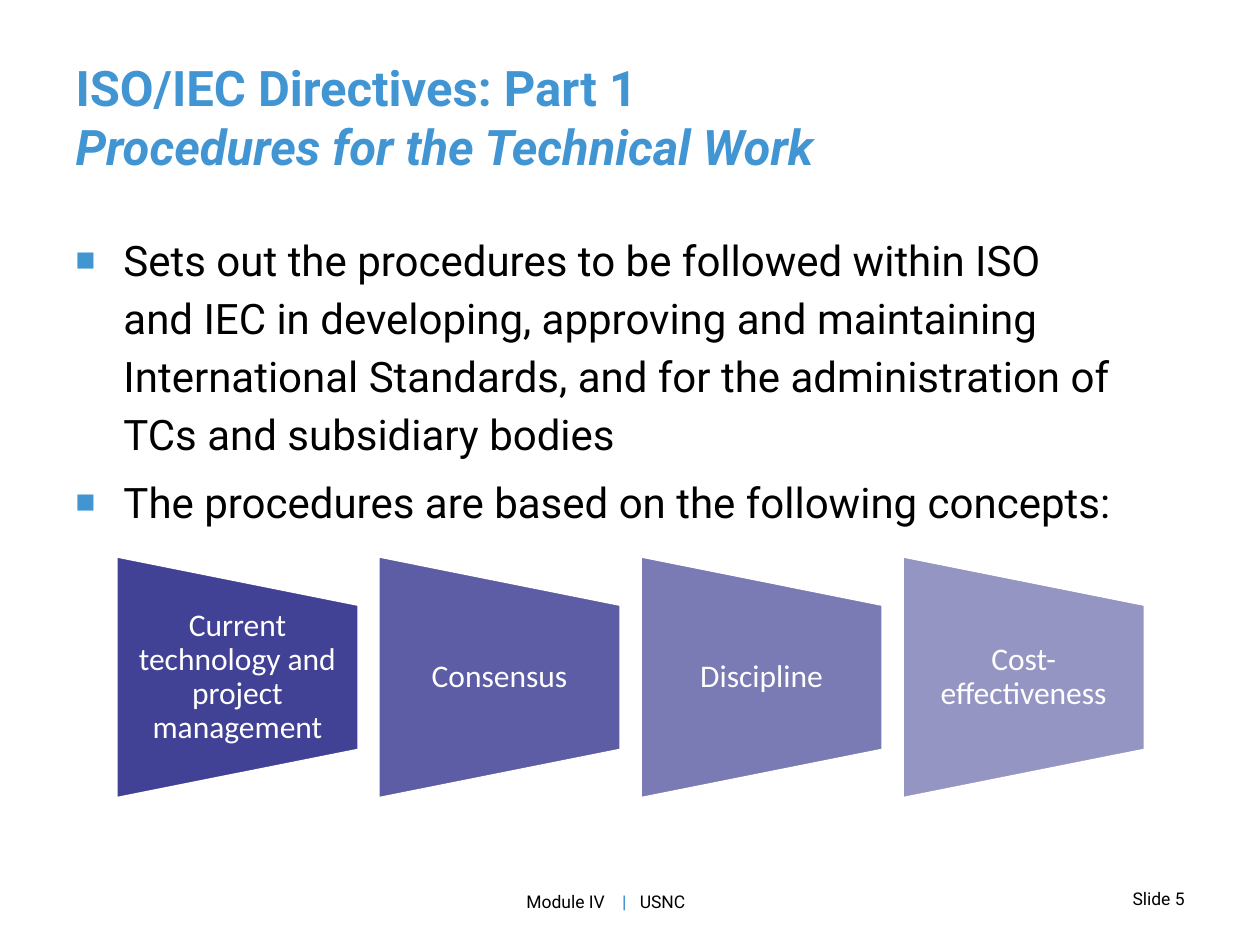
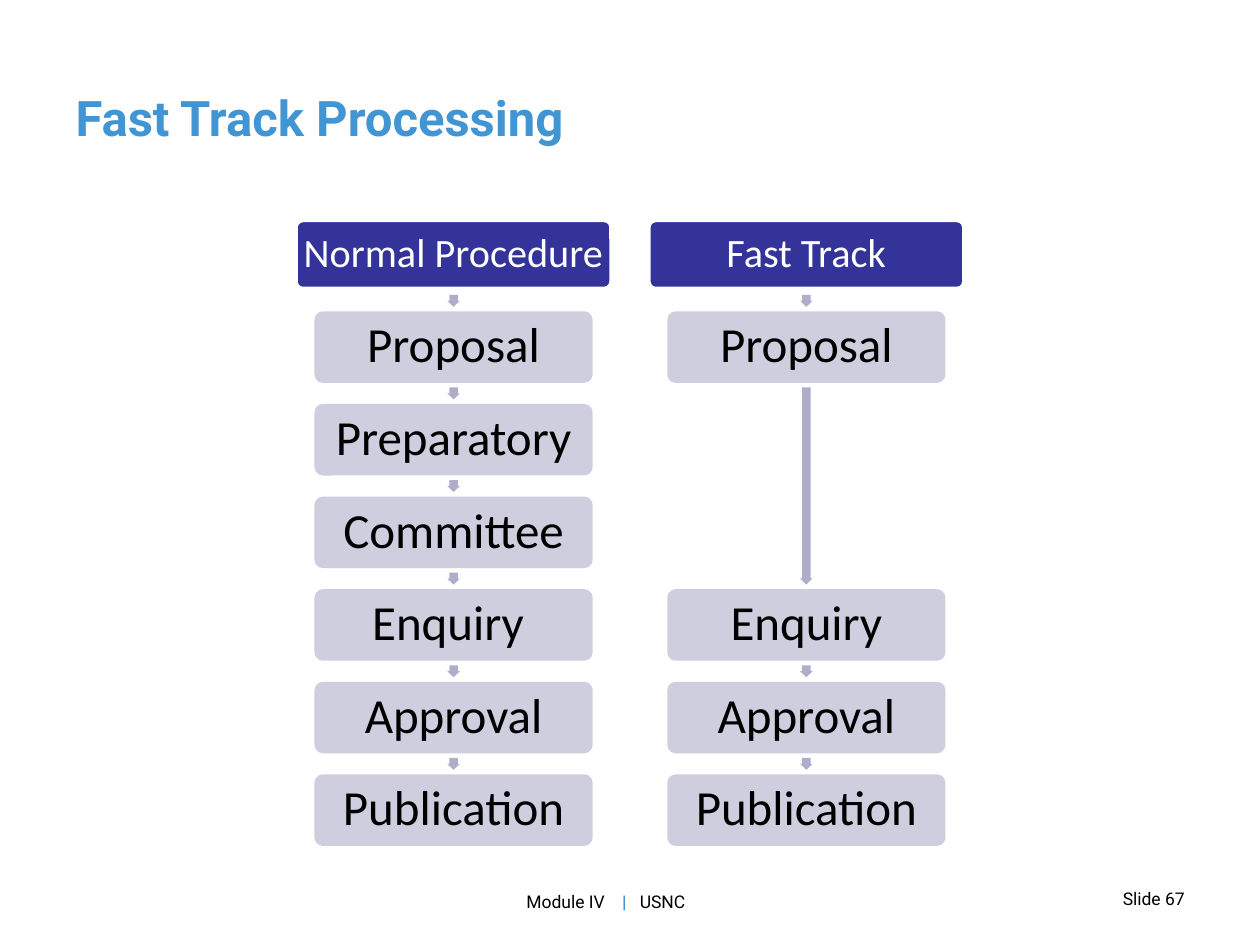
from lxml.etree import SubElement
from pptx import Presentation
from pptx.dml.color import RGBColor
from pptx.enum.shapes import MSO_SHAPE as Shape
from pptx.enum.text import MSO_ANCHOR as Anchor, MSO_AUTO_SIZE as AutoSize, PP_ALIGN as Align
from pptx.oxml.ns import qn
from pptx.util import Inches, Pt

DIRECTIVES_TITLE = [("ISO/IEC Directives: Part 1", False),
                    ("Procedures for the Technical Work", True)]
DIRECTIVES_POINTS = [
    "Sets out the procedures to be followed within ISO \vand IEC in developing, approving "
    "and maintaining International Standards, and for the administration of TCs and "
    "subsidiary bodies",
    "The procedures are based on the following concepts:",
]
CONCEPTS = [("Current technology and project management", 90), ("Consensus", 77),
            ("Discipline", 63), ("Cost-effectiveness", 50)]
TRACK_TITLE = [("Fast Track Processing", False)]
TRACKS = [
    [(0, "Normal Procedure"), (1, "Proposal"), (2, "Preparatory"), (3, "Committee"),
     (4, "Enquiry "), (5, "Approval"), (6, "Publication")],
    [(0, "Fast Track"), (1, "Proposal"), (4, "Enquiry"), (5, "Approval"), (6, "Publication")],
]
FOOTER_PARTS = ["Module IV", "\t|", "\tUSNC"]
FOOTER_TABS = [0.76, 0.9]

BLUE = RGBColor(0x41, 0x95, 0xD3)
BLACK = RGBColor(0, 0, 0)
WHITE = RGBColor(255, 255, 255)
NAVY = RGBColor(0x2D, 0x2D, 0x8A)
INDIGO = RGBColor(0x33, 0x33, 0x99)
LAVENDER = RGBColor(0xCE, 0xCE, 0xDE)
ARROW_GRAY = RGBColor(0xAE, 0xAE, 0xCA)
TEXT_FONT, DIAGRAM_FONT = "Roboto", "Calibri"
TITLE_SIZE, BODY_SIZE = 28, 24

CONCEPT_LEFT, CONCEPT_TOP, CONCEPT_SIZE, CONCEPT_PITCH = 0.92, 4.41, 1.93, 2.08
LABEL_TOP, LABEL_HEIGHT = 4.8, 1.15
TRACK_CENTERS = [3.6, 6.4]
TRACK_TOP, ROW_HEIGHT = 1.75, 0.54
ROW_PITCH = (6.16 - TRACK_TOP) / 6
HEADER_WIDTH, STEP_WIDTH, ARROW_WIDTH, ARROW_GAP = 2.5, 2.18, 0.1, 0.05


def box(left, top, width, height):
    return [Inches(length) for length in (left, top, width, height)]


def place(shape, *bounds):
    shape.left, shape.top, shape.width, shape.height = box(*bounds)


def style(paragraph, size, color, name=TEXT_FONT, bold=None):
    font = paragraph.font
    font.size, font.name, font.bold = Pt(size), name, bold
    font.color.rgb = color


def paint(shape, fill, line=None, opacity=100):
    shape.shadow.inherit = False
    shape.fill.solid()
    shape.fill.fore_color.rgb = fill
    if opacity < 100:
        color = shape.element.spPr.find(f"{qn('a:solidFill')}/{qn('a:srgbClr')}")
        SubElement(color, qn("a:alpha"), val=str(opacity * 1000))
    if line is None:
        shape.line.fill.background()
    else:
        shape.line.color.rgb = line
        shape.line.width = Pt(2)


def write_label(shape, text, size, color, side_inset=0.02, end_inset=0.05):
    frame = shape.text_frame
    frame.word_wrap = True
    frame.vertical_anchor = Anchor.MIDDLE
    frame.margin_left = frame.margin_right = Inches(side_inset)
    frame.margin_top = frame.margin_bottom = Inches(end_inset)
    paragraph = frame.paragraphs[0]
    paragraph.text = text
    paragraph.alignment = Align.CENTER
    paragraph.line_spacing = 0.9
    style(paragraph, size, color, DIAGRAM_FONT)


def set_template_sizes(presentation):
    master = presentation.slide_master.element
    for tag, size in (("p:titleStyle", TITLE_SIZE), ("p:bodyStyle", BODY_SIZE)):
        level = master.find(f".//{qn(tag)}/{qn('a:lvl1pPr')}/{qn('a:defRPr')}")
        level.set("sz", str(size * 100))


def add_slide(presentation, layout, title_lines, number):
    slide = presentation.slides.add_slide(presentation.slide_layouts[layout])
    title = slide.shapes.title
    place(title, 0.5, 0.3, 9, 1.25)
    title.text_frame.auto_size = AutoSize.NONE
    title.text_frame.vertical_anchor = Anchor.MIDDLE
    paragraph = title.text_frame.paragraphs[0]
    paragraph.alignment = Align.LEFT
    for index, (text, italic) in enumerate(title_lines):
        if index:
            paragraph.add_line_break()
        run = paragraph.add_run()
        run.text = text
        run.font.italic = italic
    style(paragraph, TITLE_SIZE, BLUE, bold=True)

    footer = slide.shapes.add_textbox(*box(4.08, 7.02, 2.42, 0.44)).text_frame
    footer.word_wrap = True
    paragraph = footer.paragraphs[0]
    tabs = SubElement(paragraph._p.get_or_add_pPr(), qn("a:tabLst"))
    for position in FOOTER_TABS:
        SubElement(tabs, qn("a:tab"), pos=str(Inches(position)), algn="l")
    for text in FOOTER_PARTS:
        run = paragraph.add_run()
        run.text = text
        if "|" in text:
            run.font.bold = True
            run.font.color.rgb = BLUE
    style(paragraph, 10, BLACK)

    counter = slide.shapes.add_textbox(*box(8.42, 7, 1.08, 0.33)).text_frame
    counter.word_wrap = True
    paragraph = counter.paragraphs[0]
    paragraph.text = f"Slide {number}"
    paragraph.alignment = Align.RIGHT
    style(paragraph, 10, BLACK)
    return slide


def add_bullets(body, points):
    place(body, 0.5, 1.75, 9, 4.95)
    frame = body.text_frame
    frame.auto_size = AutoSize.NONE
    for index, text in enumerate(points):
        paragraph = frame.add_paragraph() if index else frame.paragraphs[0]
        paragraph.text = text
        properties = paragraph._p.get_or_add_pPr()
        properties.set("marL", str(Inches(0.38)))
        properties.set("indent", str(-Inches(0.38)))
        bullet_color = SubElement(properties, qn("a:buClr"))
        SubElement(bullet_color, qn("a:srgbClr"), val=str(BLUE))
        SubElement(properties, qn("a:buSzPct"), val="50000")
        SubElement(properties, qn("a:buFont"), typeface=TEXT_FONT)
        SubElement(properties, qn("a:buChar"), char="■")
        paragraph.line_spacing = 1.15
        paragraph.space_before = Pt(6 if index else 0)
        style(paragraph, BODY_SIZE, BLACK)


def add_concepts(slide):
    for column, (text, opacity) in enumerate(CONCEPTS):
        left = CONCEPT_LEFT + column * CONCEPT_PITCH
        funnel = slide.shapes.add_shape(
            Shape.FLOWCHART_MANUAL_OPERATION,
            *box(left, CONCEPT_TOP, CONCEPT_SIZE, CONCEPT_SIZE))
        funnel.rotation = 270
        paint(funnel, NAVY, WHITE, opacity)
        label = slide.shapes.add_textbox(*box(left, LABEL_TOP, CONCEPT_SIZE, LABEL_HEIGHT))
        write_label(label, text, 18, WHITE, 0.12, 0)


def add_track(slide, center, steps):
    previous_bottom = None
    for row, text in steps:
        top = TRACK_TOP + row * ROW_PITCH
        if previous_bottom is not None:
            start = previous_bottom + ARROW_GAP
            arrow = slide.shapes.add_shape(
                Shape.DOWN_ARROW,
                *box(center - ARROW_WIDTH / 2, start, ARROW_WIDTH, top - ARROW_GAP - start))
            arrow.adjustments[0] = 0.67
            paint(arrow, ARROW_GRAY)
        width = STEP_WIDTH if row else HEADER_WIDTH
        step = slide.shapes.add_shape(
            Shape.ROUNDED_RECTANGLE, *box(center - width / 2, top, width, ROW_HEIGHT))
        step.adjustments[0] = 0.1
        if row:
            paint(step, LAVENDER, LAVENDER)
            write_label(step, text, 28, BLACK)
        else:
            paint(step, INDIGO, WHITE)
            write_label(step, text, 23, WHITE)
        previous_bottom = top + ROW_HEIGHT


def main():
    presentation = Presentation()
    presentation.slide_width, presentation.slide_height = Inches(10), Inches(7.5)
    set_template_sizes(presentation)

    directives = add_slide(presentation, 1, DIRECTIVES_TITLE, 5)
    add_bullets(directives.placeholders[1], DIRECTIVES_POINTS)
    add_concepts(directives)

    fast_track = add_slide(presentation, 5, TRACK_TITLE, 67)
    for center, steps in zip(TRACK_CENTERS, TRACKS):
        add_track(fast_track, center, steps)

    presentation.save("out.pptx")


if __name__ == "__main__":
    main()
